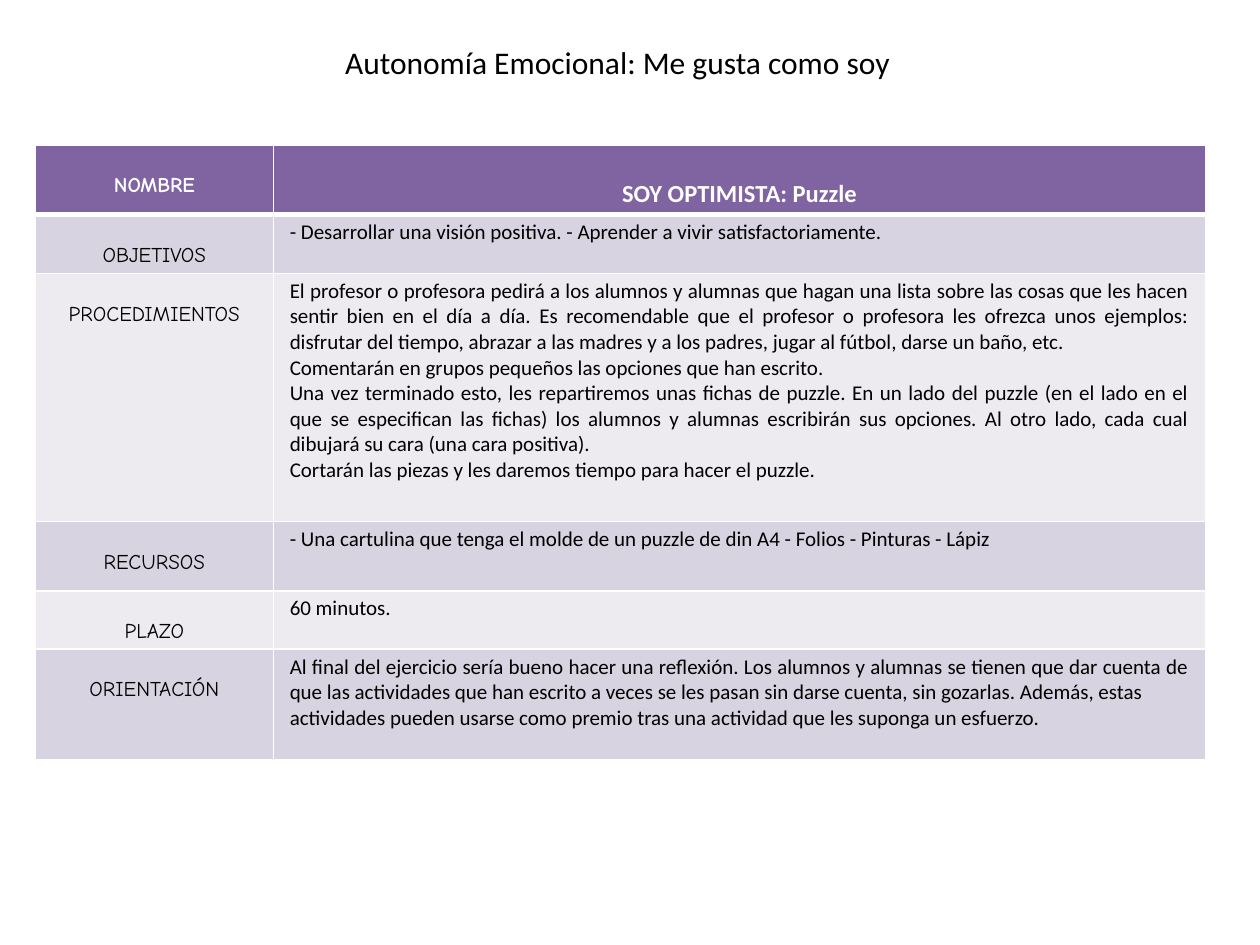
from lxml import etree
from pptx import Presentation
from pptx.dml.color import RGBColor
from pptx.enum import text
from pptx.oxml import ns
from pptx.util import Inches, Pt

COLORS = {"header": "8064A2", "odd": "D8D3E0", "even": "EDEAF0",
          "white": "FFFFFF", "black": "000000"}
LABEL_FONT, BODY_FONT = "Comic Neue", "Calibri"
COLUMN_WIDTHS = [1.89, 7.4]

# Row height, label and paragraphs of each section; the first is the header
SECTIONS = [
    (0.55, "NOMBRE", ["SOY OPTIMISTA: Puzzle"]),
    (0.47, "OBJETIVOS", [
        "- Desarrollar una visión positiva. - Aprender a vivir satisfactoriamente."]),
    (1.97, "PROCEDIMIENTOS", [
        "El profesor o profesora pedirá a los alumnos y alumnas que hagan una lista "
        "sobre las cosas que les hacen sentir bien en el día a día. Es recomendable "
        "que el profesor o profesora les ofrezca unos ejemplos: disfrutar del tiempo, "
        "abrazar a las madres y a los padres, jugar al fútbol, darse un baño, etc.",
        "Comentarán en grupos pequeños las opciones que han escrito.",
        "Una vez terminado esto, les repartiremos unas fichas de puzzle. En un lado "
        "del puzzle (en el lado en el que se especifican las fichas) los alumnos y "
        "alumnas escribirán sus opciones. Al otro lado, cada cual dibujará su cara "
        "(una cara positiva).",
        "Cortarán las piezas y les daremos tiempo para hacer el puzzle."]),
    (0.55, "RECURSOS", [
        "- Una cartulina que tenga el molde de un puzzle de din A4 - Folios - "
        "Pinturas - Lápiz"]),
    (0.46, "PLAZO", ["60 minutos."]),
    (0.88, "ORIENTACIÓN", [
        "Al final del ejercicio sería bueno hacer una reflexión. Los alumnos y alumnas "
        "se tienen que dar cuenta de que las actividades que han escrito a veces se "
        "les pasan sin darse cuenta, sin gozarlas. Además, estas",
        "actividades pueden usarse como premio tras una actividad que les suponga un "
        "esfuerzo."]),
]


def rgb(name):
    return RGBColor.from_string(COLORS[name])


def format_font(font, name, size, color, bold=False):
    font.name = name
    font.size = Pt(size)
    font.bold = bold
    font.color.rgb = rgb(color)


def set_borders(cell, bottom_width):
    """Give the cell white 1 pt borders, with its own width at the bottom."""
    properties = cell._tc.get_or_add_tcPr()
    widths = {"lnL": 1, "lnR": 1, "lnT": 1, "lnB": bottom_width}
    for position, (side, width) in enumerate(widths.items()):
        line = etree.Element(ns.qn(f"a:{side}"), w=str(Pt(width)))
        fill = etree.SubElement(line, ns.qn("a:solidFill"))
        etree.SubElement(fill, ns.qn("a:srgbClr"), val=COLORS["white"])
        properties.insert(position, line)


def fill_cell(cell, paragraphs, fill, font, size=12, align="CENTER", top=0.04,
              header=False):
    cell.fill.solid()
    cell.fill.fore_color.rgb = rgb(fill)
    cell.margin_left = cell.margin_right = Inches(0.13)
    cell.margin_top, cell.margin_bottom = Inches(top), Inches(0.04)
    cell.text_frame.text = "\n".join(paragraphs)
    for paragraph in cell.text_frame.paragraphs:
        paragraph.alignment = text.PP_ALIGN[align]
        for run in paragraph.runs:
            format_font(run.font, font, size, "white" if header else "black", header)
    set_borders(cell, 3 if header else 1)


def add_title(slide, title):
    box = slide.shapes.add_textbox(Inches(2.64), Inches(0.29), Inches(4.88), Inches(0.4))
    frame = box.text_frame
    frame.word_wrap = True
    frame.auto_size = text.MSO_AUTO_SIZE.SHAPE_TO_FIT_TEXT
    frame.text = title
    format_font(frame.paragraphs[0].runs[0].font, BODY_FONT, 18, "black")


def add_activity_table(slide):
    height = sum(section[0] for section in SECTIONS)
    activity = slide.shapes.add_table(
        len(SECTIONS), len(COLUMN_WIDTHS), Inches(0.28), Inches(1.15),
        Inches(sum(COLUMN_WIDTHS)), Inches(height)).table
    for column, width in zip(activity.columns, COLUMN_WIDTHS):
        column.width = Inches(width)
    for index, (row_height, label, paragraphs) in enumerate(SECTIONS):
        activity.rows[index].height = Inches(row_height)
        header = index == 0
        fill = "header" if header else "odd" if index % 2 else "even"
        fill_cell(activity.cell(index, 0), [label], fill, LABEL_FONT, top=0.23,
                  header=header)
        content = activity.cell(index, 1)
        if header:
            fill_cell(content, paragraphs, fill, BODY_FONT, size=14, top=0.27,
                      header=True)
        else:
            fill_cell(content, paragraphs, fill, BODY_FONT, align="JUSTIFY")


def main():
    deck = Presentation()
    deck.slide_width, deck.slide_height = Inches(10), Inches(7.5)
    slide = deck.slides.add_slide(deck.slide_layouts[6])
    add_activity_table(slide)
    add_title(slide, "Autonomía Emocional: Me gusta como soy")
    deck.save("out.pptx")


if __name__ == "__main__":
    main()
